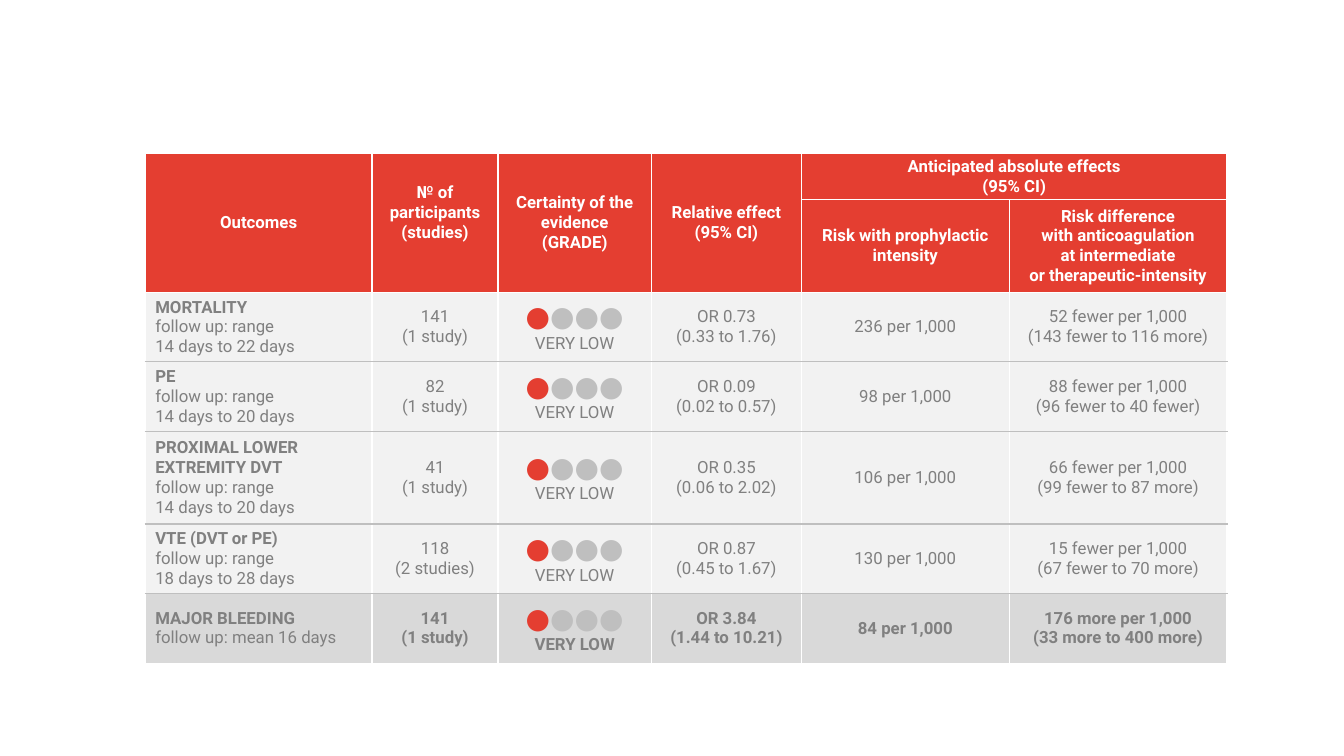
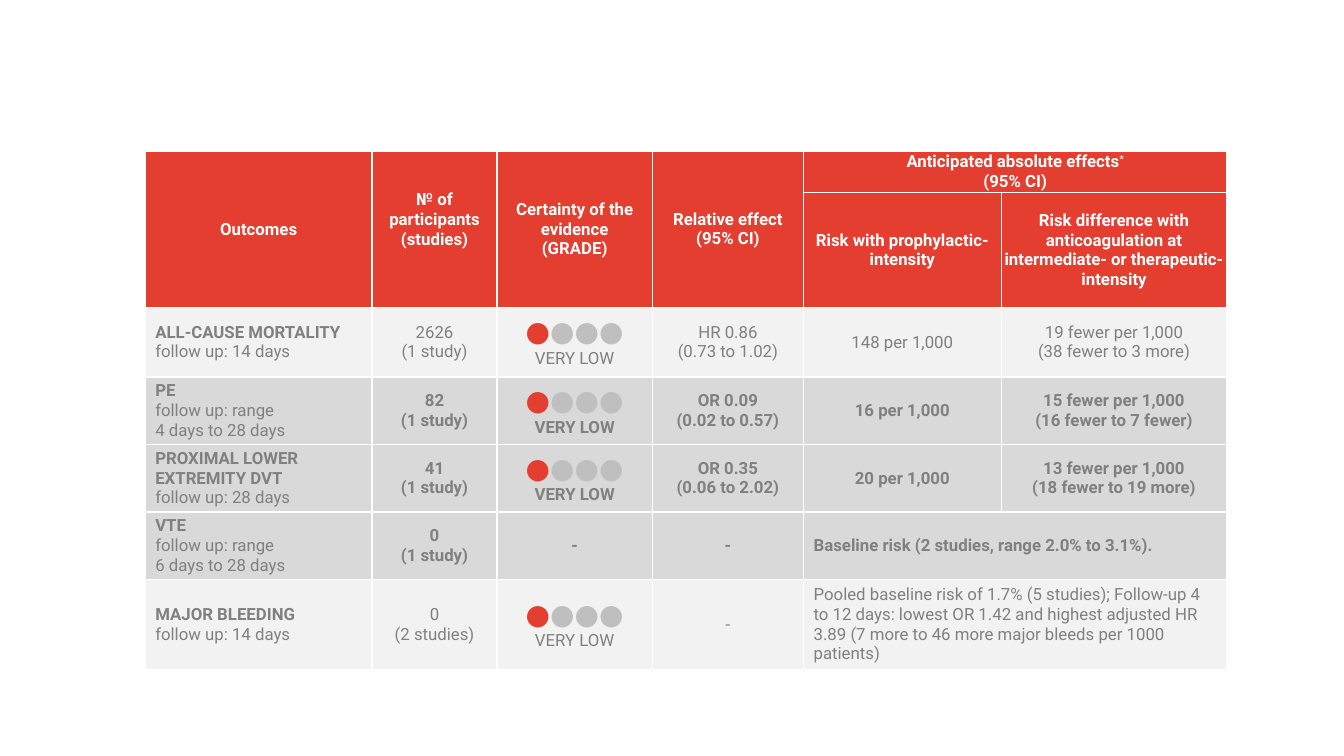
"""Build two evidence tables on anticoagulation intensity."""
import dataclasses

import lxml.etree
import pptx
import pptx.dml.color
import pptx.enum.text
import pptx.oxml.ns
import pptx.util

Inches = pptx.util.Inches
RGBColor = pptx.dml.color.RGBColor
Align = pptx.enum.text.PP_ALIGN

RED = RGBColor(0xE4, 0x3E, 0x31)
WHITE = RGBColor(0xFF, 0xFF, 0xFF)
TEXT_GREY = RGBColor(0x80, 0x80, 0x80)
RULE_GREY = RGBColor(0xBF, 0xBF, 0xBF)
PALE = RGBColor(0xF2, 0xF2, 0xF2)
SHADED = RGBColor(0xD9, 0xD9, 0xD9)

FONT = "Roboto"
TEXT_SIZE = 12
DOT_SIZE = 20
TEXT_INSET = 0.1
LINE_HEIGHT = 0.2
HEADER_ROWS = 2
TABLE_LEFT = 1.44

HEADINGS = [
    "Outcomes",
    "№ of participants\n(studies)",
    "Certainty of the evidence\n(GRADE)",
    "Relative effect\n(95% CI)",
]
PARTICIPANTS_COLUMN = 1


@dataclasses.dataclass
class Outcome:
    name: str
    follow_up: str
    participants: str
    effect: str
    risk: str
    difference: str = ""
    emphasis: bool = False
    rated: bool = True


@dataclasses.dataclass
class Evidence:
    top: float
    columns: list
    rows: list
    inset: float
    rule: RGBColor
    effects_mark: str
    risk_heading: str
    difference_heading: str
    outcomes: list


TRIAL_EVIDENCE = Evidence(
    top=1.52,
    columns=[2.25, 1.25, 1.52, 1.49, 2.06, 2.16],
    rows=[0.46, 0.92, 0.69, 0.69, 0.92, 0.69, 0.69],
    inset=0,
    rule=RULE_GREY,
    effects_mark="",
    risk_heading="Risk with prophylactic intensity",
    difference_heading="Risk difference\nwith anticoagulation\nat intermediate\nor therapeutic-intensity",
    outcomes=[
        Outcome("MORTALITY", "follow up: range\n14 days to 22 days", "141\n(1 study)",
                "OR 0.73\n(0.33 to 1.76)", "236 per 1,000",
                "52 fewer per 1,000\n(143 fewer to 116 more)"),
        Outcome("PE", "follow up: range\n14 days to 20 days", "82\n(1 study)",
                "OR 0.09\n(0.02 to 0.57)", "98 per 1,000",
                "88 fewer per 1,000\n(96 fewer to 40 fewer)"),
        Outcome("PROXIMAL LOWER EXTREMITY DVT", "follow up: range\n14 days to 20 days",
                "41\n(1 study)", "OR 0.35\n(0.06 to 2.02)", "106 per 1,000",
                "66 fewer per 1,000\n(99 fewer to 87 more)"),
        Outcome("VTE (DVT or PE)", "follow up: range\n18 days to 28 days", "118\n(2 studies)",
                "OR 0.87\n(0.45 to 1.67)", "130 per 1,000",
                "15 fewer per 1,000\n(67 fewer to 70 more)"),
        Outcome("MAJOR BLEEDING", "follow up: mean 16 days", "141\n(1 study)",
                "OR 3.84\n(1.44 to 10.21)", "84 per 1,000",
                "176 more per 1,000\n(33 more to 400 more)", emphasis=True),
    ],
)

COHORT_EVIDENCE = Evidence(
    top=1.5,
    columns=[2.25, 1.24, 1.54, 1.5, 1.96, 2.24],
    rows=[0.39, 1.14, 0.69, 0.67, 0.67, 0.67, 0.89],
    inset=0.01,
    rule=WHITE,
    effects_mark="*",
    risk_heading="Risk with prophylactic-intensity",
    difference_heading="Risk difference with anticoagulation at intermediate- or therapeutic-intensity",
    outcomes=[
        Outcome("ALL-CAUSE MORTALITY", "follow up: 14 days", "2626\n(1 study)",
                "HR 0.86\n(0.73 to 1.02)", "148 per 1,000",
                "19 fewer per 1,000\n(38 fewer to 3 more)"),
        Outcome("PE", "follow up: range\n4 days to 28 days", "82\n(1 study)",
                "OR 0.09\n(0.02 to 0.57)", "16 per 1,000",
                "15 fewer per 1,000\n(16 fewer to 7 fewer)", emphasis=True),
        Outcome("PROXIMAL LOWER EXTREMITY DVT", "follow up: 28 days", "41\n(1 study)",
                "OR 0.35\n(0.06 to 2.02)", "20 per 1,000",
                "13 fewer per 1,000\n(18 fewer to 19 more)", emphasis=True),
        Outcome("VTE", "follow up: range\n6 days to 28 days", "0\n(1 study)", "-",
                "Baseline risk (2 studies, range 2.0% to 3.1%).",
                emphasis=True, rated=False),
        Outcome("MAJOR BLEEDING", "follow up: 14 days", "0\n(2 studies)", "-",
                "Pooled baseline risk of 1.7% (5 studies); Follow-up 4 to 12 days: "
                "lowest OR 1.42 and highest adjusted HR 3.89 "
                "(7 more to 46 more major bleeds per 1000 patients)"),
    ],
)


def add_span(para, text, size=None, colour=None, bold=None, raised=False):
    """Append text to a paragraph, turning newlines into line breaks."""
    for index, line in enumerate(text.split("\n")):
        if index:
            para.add_line_break()
        if not line:
            continue
        span = para.add_run()
        span.text = line
        if size:
            span.font.size = pptx.util.Pt(size)
        if colour is not None:
            span.font.color.rgb = colour
        if bold is not None:
            span.font.bold = bold
        if raised:
            span.font._element.set("baseline", "30000")


def start_cell(cell, text="", colour=TEXT_GREY, bold=False, align=Align.CENTER):
    """Set the base text style of a cell, add its text and return the paragraph."""
    para = cell.text_frame.paragraphs[0]
    para.alignment = align
    para.font.name = FONT
    para.font.size = pptx.util.Pt(TEXT_SIZE)
    para.font.bold = bold
    para.font.color.rgb = colour
    add_span(para, text)
    return para


def set_borders(cell, top, bottom):
    """Give a cell white sides and the given top and bottom lines."""
    properties = cell._tc.get_or_add_tcPr()
    sides = [("lnL", WHITE), ("lnR", WHITE), ("lnT", top), ("lnB", bottom)]
    for index, (tag, colour) in enumerate(sides):
        line = lxml.etree.Element(pptx.oxml.ns.qn("a:" + tag), w=str(pptx.util.Pt(1)))
        fill = lxml.etree.SubElement(line, pptx.oxml.ns.qn("a:solidFill"))
        lxml.etree.SubElement(fill, pptx.oxml.ns.qn("a:srgbClr"), val=str(colour))
        properties.insert(index, line)


def style_row(table, row, fill, inset, top, bottom):
    """Fill, inset and outline every cell of a row."""
    for column in range(len(table.columns)):
        cell = table.cell(row, column)
        cell.fill.solid()
        cell.fill.fore_color.rgb = fill
        cell.vertical_anchor = pptx.enum.text.MSO_ANCHOR.MIDDLE
        cell.margin_left = cell.margin_right = Inches(inset)
        cell.margin_top = cell.margin_bottom = Inches(inset)
        set_borders(cell, top, bottom)


def add_header(table, evidence):
    """Write the two merged heading rows."""
    for row in range(HEADER_ROWS):
        style_row(table, row, RED, evidence.inset, WHITE, WHITE)
    for column, heading in enumerate(HEADINGS):
        cell = table.cell(0, column)
        cell.merge(table.cell(1, column))
        start_cell(cell, heading, WHITE, True)
    table.cell(0, PARTICIPANTS_COLUMN).margin_bottom = Inches(LINE_HEIGHT)

    effects = table.cell(0, 4)
    effects.merge(table.cell(0, 5))
    para = start_cell(effects, "Anticipated absolute effects", WHITE, True)
    add_span(para, evidence.effects_mark, raised=True)
    add_span(para, "\n(95% CI)")
    start_cell(table.cell(1, 4), evidence.risk_heading, WHITE, True)
    start_cell(table.cell(1, 5), evidence.difference_heading, WHITE, True)


def add_rating(cell, bold):
    """Show one filled dot out of four above the rating."""
    para = start_cell(cell, bold=bold)
    add_span(para, "●", DOT_SIZE, RED, False)
    add_span(para, "●●●", DOT_SIZE, RULE_GREY, False)
    add_span(para, "\nVERY LOW")


def add_outcome(table, row, outcome):
    """Write the text of one outcome row."""
    bold = outcome.emphasis
    name = table.cell(row, 0)
    name.margin_left = Inches(TEXT_INSET)
    para = start_cell(name, align=Align.LEFT)
    add_span(para, outcome.name, bold=True)
    add_span(para, "\n" + outcome.follow_up)

    start_cell(table.cell(row, PARTICIPANTS_COLUMN), outcome.participants, bold=bold)
    if outcome.rated:
        add_rating(table.cell(row, 2), bold)
    else:
        start_cell(table.cell(row, 2), "-", bold=bold)
    start_cell(table.cell(row, 3), outcome.effect, bold=bold)

    risk = table.cell(row, 4)
    if outcome.difference:
        start_cell(risk, outcome.risk, bold=bold)
        start_cell(table.cell(row, 5), outcome.difference, bold=bold)
    else:
        risk.merge(table.cell(row, 5))
        risk.margin_left = risk.margin_right = Inches(TEXT_INSET)
        start_cell(risk, outcome.risk, bold=bold, align=Align.LEFT)


def add_evidence_slide(deck, evidence):
    """Add a slide holding one evidence table."""
    page = deck.slides.add_slide(deck.slide_layouts[6])
    table = page.shapes.add_table(
        len(evidence.rows), len(evidence.columns), Inches(TABLE_LEFT), Inches(evidence.top),
        Inches(sum(evidence.columns)), Inches(sum(evidence.rows))).table
    table.first_row = table.horz_banding = False
    for column, width in zip(table.columns, evidence.columns):
        column.width = Inches(width)
    for row, height in zip(table.rows, evidence.rows):
        row.height = Inches(height)

    add_header(table, evidence)
    last = len(evidence.rows) - 1
    for row, outcome in enumerate(evidence.outcomes, HEADER_ROWS):
        style_row(table, row, SHADED if outcome.emphasis else PALE, evidence.inset,
                  WHITE if row == HEADER_ROWS else evidence.rule,
                  WHITE if row == last else evidence.rule)
        add_outcome(table, row, outcome)


def main():
    """Build and save the deck."""
    deck = pptx.Presentation()
    deck.slide_width = Inches(13.33)
    deck.slide_height = Inches(7.5)
    for evidence in (TRIAL_EVIDENCE, COHORT_EVIDENCE):
        add_evidence_slide(deck, evidence)
    deck.save("out.pptx")


if __name__ == "__main__":
    main()
